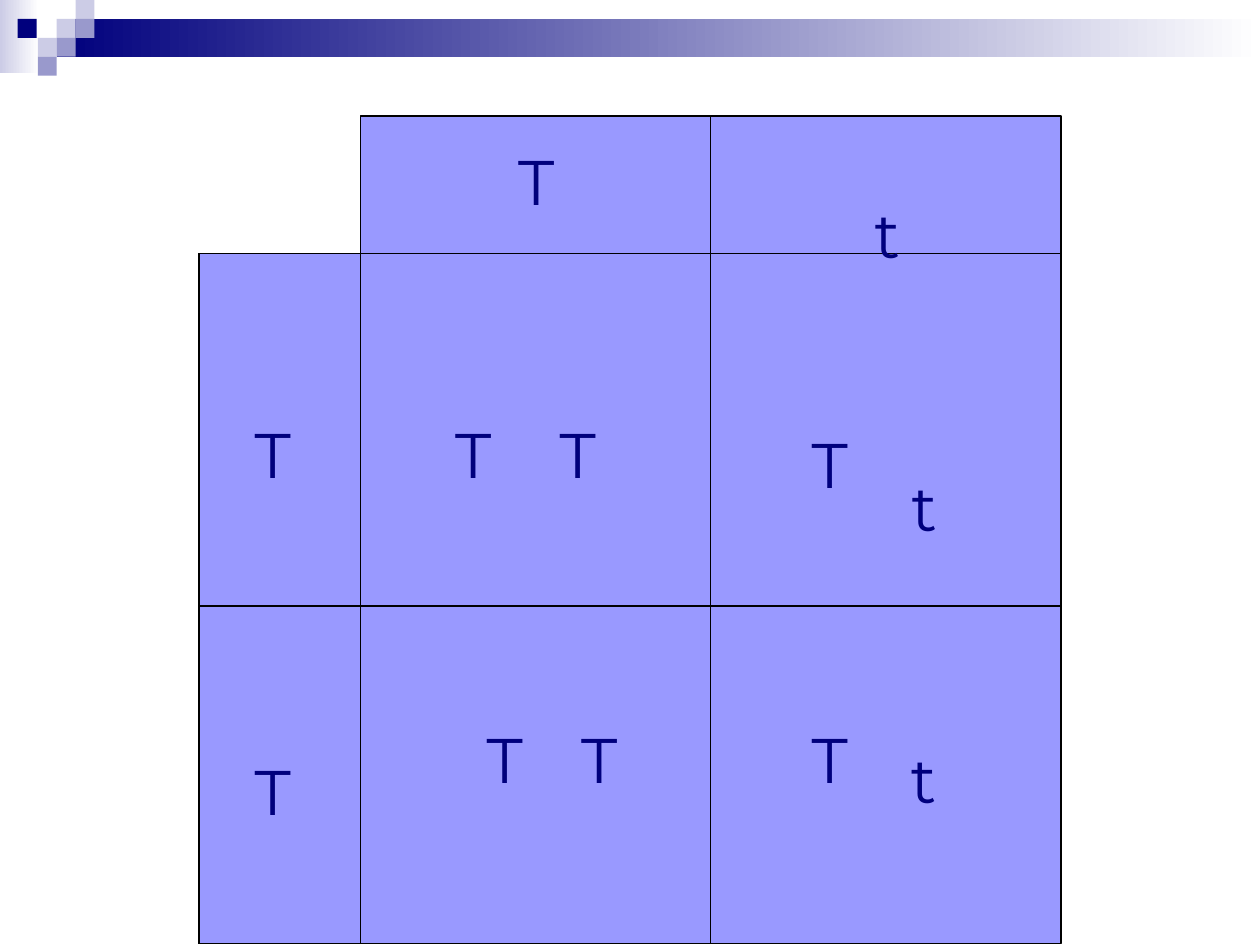
"""Build a Punnett square slide crossing a TT parent with a Tt parent."""
from pptx import Presentation
from pptx import util as u
from pptx.dml import color
from pptx.enum import shapes, text

PX = u.Inches(1) // 100
NAVY, LILAC, MIST, PERIWINKLE = "00007D", "9999CC", "CCCCE6", "9999FF"


def rgb(code):
    return color.RGBColor.from_string(code)


def block(bounds, fill=None, outline=None):
    rect = slide.shapes.add_shape(shapes.MSO_SHAPE.RECTANGLE, *(n * PX for n in bounds))
    rect.shadow.inherit = False
    if fill:
        rect.fill.solid()
        rect.fill.fore_color.rgb = rgb(fill)
    else:
        rect.fill.background()
    if outline:
        rect.line.color.rgb = rgb(outline)
        rect.line.width = u.Pt(0.75)
    else:
        rect.line.fill.background()
    return rect


deck = Presentation()
deck.slide_width, deck.slide_height = 1000 * PX, 750 * PX
slide = deck.slides.add_slide(deck.slide_layouts[6])

for bounds, start in [((0, 0, 31, 58), MIST), ((45, 15, 955, 30), NAVY)]:
    fade = block(bounds).fill
    fade.gradient()
    fade.gradient_angle = 0
    for stop, shade in zip(fade.gradient_stops, (start, "FFFFFF")):
        stop.color.rgb = rgb(shade)

for left, top, shade in [
    (45, 15, MIST), (60, 0, MIST), (60, 15, LILAC), (30, 30, MIST),
    (14, 15, NAVY), (45, 30, LILAC), (30, 45, LILAC),
]:
    block((left, top, 15, 15), shade)

left, first_allele, second_allele, right = 158, 286, 564, 842
top, first_row, second_row, bottom = 92, 201, 481, 749
for x, y, end, fill in [
    (left, first_row, right, PERIWINKLE),
    (second_allele, top, right, PERIWINKLE),
    (first_allele, top, second_allele, PERIWINKLE),
    (left, first_row, right, None),
    (left, second_row, right, None),
]:
    block((x, y, end - x, bottom - y), fill, "000000")

allele_format = {"name": "Montserrat", "size": u.Pt(36)}
for allele, x, y, width in [
    ("T", 183, 325, 67), ("T", 183, 592, 67),
    ("T", 392, 108, 67), ("t", 683, 150, 42),
    ("T", 342, 325, 67), ("T", 425, 325, 67),
    ("T", 625, 333, 67), ("t", 700, 367, 67),
    ("T", 442, 567, 67), ("T", 367, 567, 67),
    ("T", 625, 567, 67), ("t", 708, 583, 50),
]:
    label = slide.shapes.add_textbox(x * PX, y * PX, width * PX, 71 * PX).text_frame
    label.word_wrap = False
    letter = label.paragraphs[0]
    letter.text = allele
    letter.alignment = text.PP_ALIGN.CENTER
    font = letter.runs[0].font
    for key, value in allele_format.items():
        setattr(font, key, value)
    font.color.rgb = rgb(NAVY)

deck.save("out.pptx")
